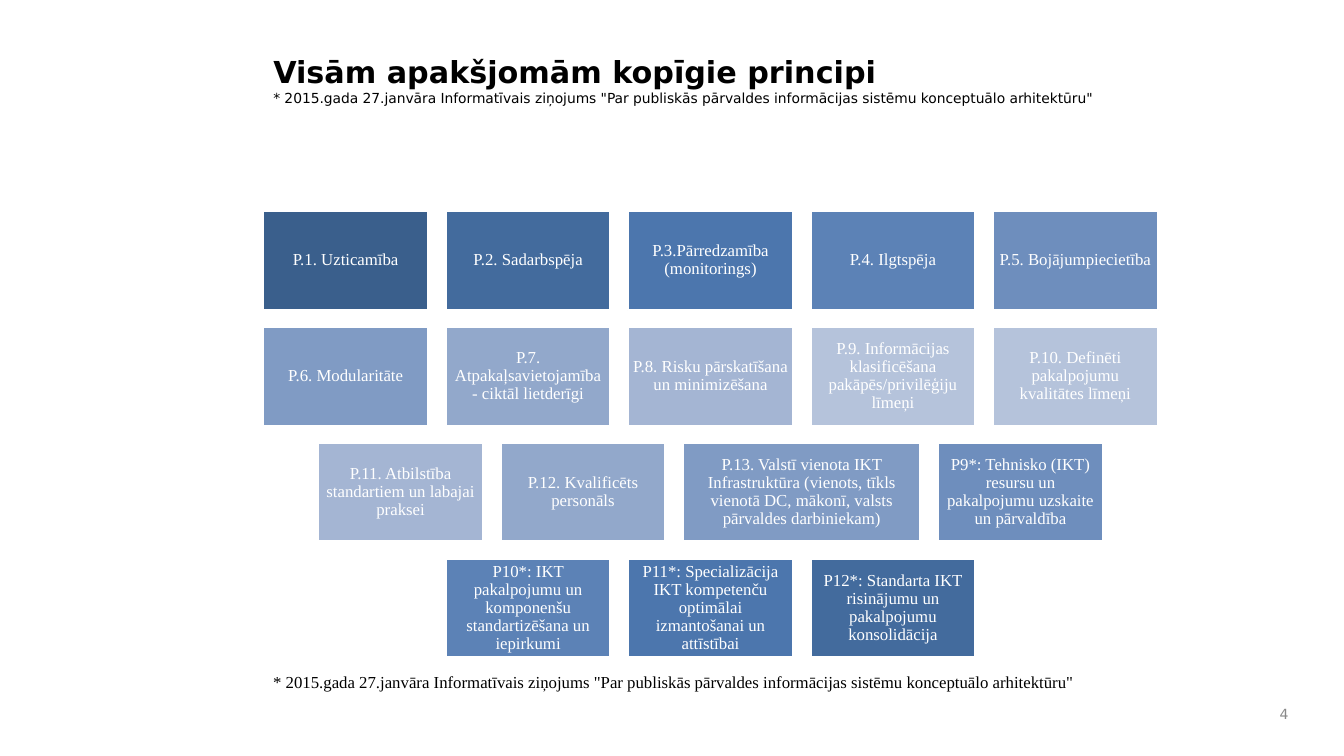
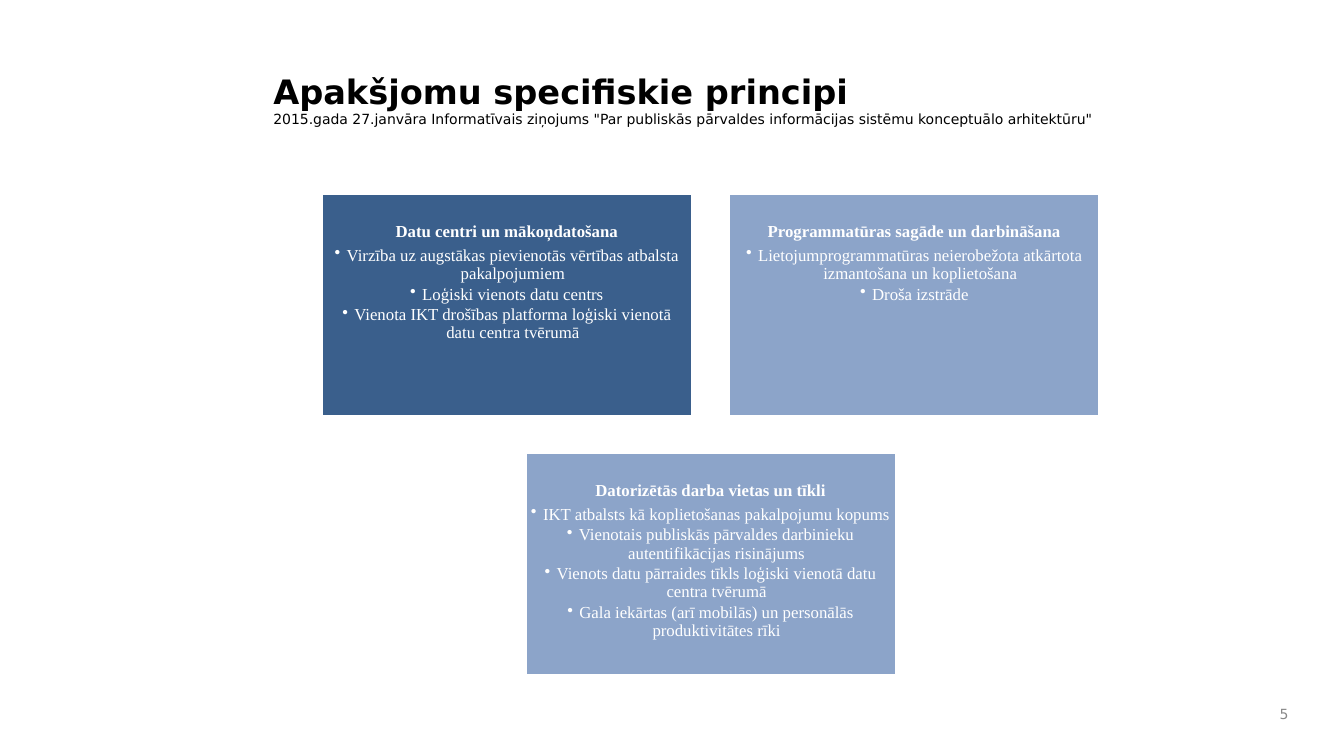
import pptx
import pptx.util
import pptx.dml.color
import pptx.enum.shapes
import pptx.enum.text
import pptx.oxml.ns
from lxml import etree

Pt = pptx.util.Pt
ALIGN = pptx.enum.text.PP_ALIGN
ANCHOR = pptx.enum.text.MSO_ANCHOR

COLORS = {
    "text": "000000", "number": "898989", "white": "FFFFFF", "card": "8CA4C9",
    "blue0": "3A5F8C", "blue1": "436B9D", "blue2": "4C76AD",
    "blue3": "5C82B6", "blue4": "6E8EBD", "blue5": "809BC4",
    "blue6": "92A8CB", "blue7": "A4B5D3", "blue8": "B5C3DB",
}
SANS, SERIF = "DejaVu Sans", "Times New Roman"
CENTER = 507.6  # horizontal middle of the content area
LEFT = 188
REPORT = ('2015.gada 27.janvāra Informatīvais ziņojums "Par publiskās pārvaldes '
          'informācijas sistēmu konceptuālo arhitektūru"')


def write(p, text, size=12, color="white", font=SERIF, bold=False,
          align=ALIGN.CENTER, spacing=None, after=None, bullet=False):
    """Add a formatted run to paragraph p."""
    p.alignment = align
    if spacing:
        p.line_spacing = spacing
    if after:
        p.space_after = Pt(after)
    if bullet:
        pPr = p._p.get_or_add_pPr()
        pPr.set("marL", str(Pt(8.6)))
        pPr.set("indent", str(-Pt(8.6)))
        etree.SubElement(pPr, pptx.oxml.ns.qn("a:buChar")).set("char", "•")
    r = p.add_run()
    r.text = text
    r.font.size = Pt(size)
    r.font.name = font
    r.font.bold = bold
    r.font.color.rgb = pptx.dml.color.RGBColor.from_string(COLORS[color])


def add_box(s, x, y, w, h, fill, anchor=ANCHOR.MIDDLE, top=3.5):
    """Add a white-edged rectangle and return its text frame."""
    sp = s.shapes.add_shape(pptx.enum.shapes.MSO_SHAPE.RECTANGLE,
                            Pt(x), Pt(y), Pt(w), Pt(h))
    sp.shadow.inherit = False
    sp.fill.solid()
    sp.fill.fore_color.rgb = pptx.dml.color.RGBColor.from_string(COLORS[fill])
    sp.line.color.rgb = pptx.dml.color.RGBColor.from_string(COLORS["white"])
    sp.line.width = Pt(2)
    tf = sp.text_frame
    tf.word_wrap = True
    tf.vertical_anchor = anchor
    tf.margin_left = tf.margin_right = tf.margin_bottom = Pt(3.5)
    tf.margin_top = Pt(top)
    return tf


prs = pptx.Presentation()
prs.slide_width, prs.slide_height = Pt(960), Pt(540)

# Titles and slide numbers: title, size, subtitle, size, bottom margin, number
headings = [
    ("Visām apakšjomām kopīgie principi", 21.6, "* " + REPORT, 9.9, 31.5, "4"),
    ("Apakšjomu specifiskie principi", 24, REPORT, 10, 3.6, "5"),
]
for title, title_size, subtitle, subtitle_size, bottom, number in headings:
    s = prs.slides.add_slide(prs.slide_layouts[5])
    sp = s.shapes.title
    sp.left, sp.top, sp.width, sp.height = Pt(LEFT), Pt(30), Pt(640), Pt(81.5)
    tf = sp.text_frame
    tf.auto_size = pptx.enum.text.MSO_AUTO_SIZE.NONE
    tf.vertical_anchor = ANCHOR.MIDDLE
    tf.margin_bottom = Pt(bottom)
    p = tf.paragraphs[0]
    write(p, title, size=title_size, color="text", font=SANS, bold=True, align=ALIGN.LEFT)
    p.add_line_break()
    write(p, subtitle, size=subtitle_size, color="text", font=SANS, align=ALIGN.LEFT)

    tf = s.shapes.add_textbox(Pt(896), Pt(498), Pt(31.5), Pt(24)).text_frame
    tf.word_wrap = True
    tf.vertical_anchor = ANCHOR.MIDDLE
    write(tf.paragraphs[0], number, size=10, color="number", font=SANS, align=ALIGN.RIGHT)

# Common principles: centred rows of boxes, shades fading out and back
s = prs.slides[0]
principle_rows = [
    ["P.1. Uzticamība", "P.2. Sadarbspēja", "P.3.Pārredzamība (monitorings)",
     "P.4. Ilgtspēja", "P.5. Bojājumpiecietība"],
    ["P.6. Modularitāte", "P.7. Atpakaļsavietojamība - ciktāl lietderīgi",
     "P.8. Risku pārskatīšana un minimizēšana",
     "P.9. Informācijas klasificēšana pakāpēs/privilēģiju līmeņi",
     "P.10. Definēti pakalpojumu kvalitātes līmeņi"],
    ["P.11. Atbilstība standartiem un labajai praksei",
     "P.12. Kvalificēts personāls",
     "P.13. Valstī vienota IKT Infrastruktūra (vienots, tīkls vienotā DC, "
     "mākonī, valsts pārvaldes darbiniekam)",
     "P9*: Tehnisko (IKT) resursu un pakalpojumu uzskaite un pārvaldība"],
    ["P10*: IKT pakalpojumu un komponenšu standartizēšana un iepirkumi",
     "P11*: Specializācija IKT kompetenču optimālai izmantošanai un attīstībai",
     "P12*: Standarta IKT risinājumu un pakalpojumu konsolidācija"],
]
box_w, wide_w, box_h, gap = 118.1, 170, 71, 12.2
last = sum(len(row) for row in principle_rows)
index = 0
for row_no, row in enumerate(principle_rows):
    widths = [wide_w if text.startswith("P.13.") else box_w for text in row]
    x = CENTER - (sum(widths) + gap * (len(row) - 1)) / 2
    for text, w in zip(row, widths):
        shade = min(index, last - index)
        tf = add_box(s, x, 150.5 + row_no * 82.8, w, box_h, f"blue{shade}")
        write(tf.paragraphs[0], text, spacing=0.9)
        x += w + gap
        index += 1

tf = s.shapes.add_textbox(Pt(LEFT), Pt(476.6), Pt(708), Pt(21.6)).text_frame
tf.word_wrap = True
write(tf.paragraphs[0], "* " + REPORT, color="text", align=ALIGN.LEFT)

# Specific principles: centred rows of cards with a heading and bullets
s = prs.slides[1]
card_rows = [
    [("blue0", "Datu centri un mākoņdatošana",
      ["Virzība uz augstākas pievienotās vērtības atbalsta pakalpojumiem",
       "Loģiski vienots datu centrs",
       "Vienota IKT drošības platforma loģiski vienotā datu centra tvērumā"]),
     ("card", "Programmatūras sagāde un darbināšana",
      ["Lietojumprogrammatūras neierobežota atkārtota izmantošana un koplietošana",
       "Droša izstrāde"])],
    [("card", "Datorizētās darba vietas un tīkli",
      ["IKT atbalsts kā koplietošanas pakalpojumu kopums",
       "Vienotais publiskās pārvaldes darbinieku autentifikācijas risinājums",
       "Vienots datu pārraides tīkls loģiski vienotā datu centra tvērumā",
       "Gala iekārtas (arī mobilās) un personālās produktivitātes rīki"])],
]
card_w, card_h, card_gap = 265, 159, 26
for row_no, row in enumerate(card_rows):
    x = CENTER - (card_w * len(row) + card_gap * (len(row) - 1)) / 2
    y = 138.3 + row_no * (card_h + card_gap)
    for fill, heading, points in row:
        tf = add_box(s, x, y, card_w, card_h, fill, anchor=ANCHOR.TOP, top=20.8)
        write(tf.paragraphs[0], heading, bold=True, spacing=0.9, after=4.2)
        for point in points:
            write(tf.add_paragraph(), point, spacing=0.9, after=1.8, bullet=True)
        x += card_w + card_gap

prs.save("out.pptx")
